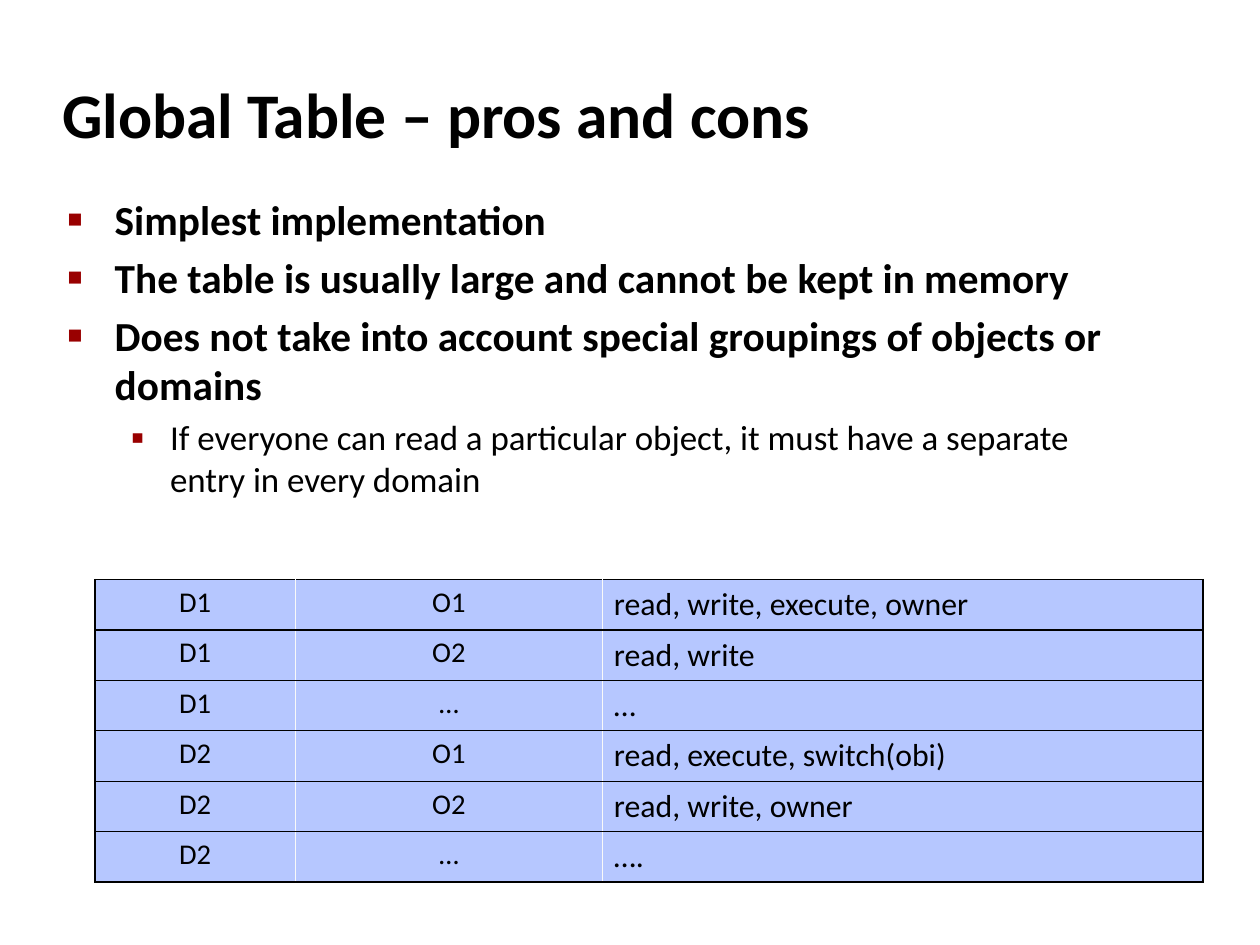
from lxml import etree
from pptx import Presentation
from pptx.dml.color import RGBColor
from pptx.enum import text
from pptx.oxml.ns import qn
from pptx.util import Cm, Pt

FONT = "Calibri"
COLORS = {"text": "000000", "bullet": "990000", "cell": "B6C7FF",
          "border": "000000", "divider": "F9F9F9"}

# (level, text)
POINTS = [
    (0, "Simplest implementation"),
    (0, "The table is usually large and cannot be kept in memory"),
    (0, "Does not take into account special groupings of objects or domains"),
    (1, "If everyone can read a particular object, it must have a separate "
        "entry in every domain"),
]
LEVELS = [
    {"size": 26, "bold": True, "left": 1.05, "hang": 1.05, "char": "■", "scale": 60},
    {"size": 22, "bold": False, "left": 2.28, "hang": 0.87, "char": "▪", "scale": 110},
]

RIGHTS = [
    ("D1", "O1", "read, write, execute, owner"),
    ("D1", "O2", "read, write"),
    ("D1", "…", "…"),
    ("D2", "O1", "read, execute, switch(obi)"),
    ("D2", "O2", "read, write, owner"),
    ("D2", "…", "…."),
]
COLUMN_WIDTHS = [4.45, 6.83, 13.34]
ROW_HEIGHT = 1.12


def write(p, words, size, bold=False, align=text.PP_ALIGN.LEFT):
    p.alignment = align
    r = p.add_run()
    r.text = words
    formats = {"name": FONT, "size": Pt(size), "bold": bold}
    for name, value in formats.items():
        setattr(r.font, name, value)
    r.font.color.rgb = RGBColor.from_string(COLORS["text"])


def place(sp, left, top, width, height, anchor):
    """Move a placeholder and give its text frame the common insets."""
    box = {"left": left, "top": top, "width": width, "height": height}
    for name, value in box.items():
        setattr(sp, name, Cm(value))
    tf = sp.text_frame
    formats = {"margin_left": Cm(0.28), "margin_right": Cm(0.28),
               "margin_top": Cm(0.15), "margin_bottom": Cm(0.15),
               "word_wrap": True, "auto_size": text.MSO_AUTO_SIZE.NONE,
               "vertical_anchor": anchor}
    for name, value in formats.items():
        setattr(tf, name, value)
    return tf


def add_bullet(p, style):
    pPr = p._p.get_or_add_pPr()
    pPr.set("marL", str(Cm(style["left"])))
    pPr.set("indent", str(-Cm(style["hang"])))
    color = etree.SubElement(pPr, qn("a:buClr"))
    etree.SubElement(color, qn("a:srgbClr"), val=COLORS["bullet"])
    etree.SubElement(pPr, qn("a:buSzPct"), val=str(style["scale"] * 1000))
    etree.SubElement(pPr, qn("a:buFont"), typeface="Arial")
    etree.SubElement(pPr, qn("a:buChar"), char=style["char"])


def fill_list(tf, points):
    for i, (level, words) in enumerate(points):
        p = tf.add_paragraph() if i else tf.paragraphs[0]
        style = LEVELS[level]
        p.level = level
        write(p, words, style["size"], style["bold"])
        add_bullet(p, style)


def add_border(cell, side, color, width):
    tcPr = cell._tc.get_or_add_tcPr()
    ln = etree.SubElement(tcPr, qn(f"a:ln{side}"), w=str(Pt(width)))
    fill = etree.SubElement(ln, qn("a:solidFill"))
    etree.SubElement(fill, qn("a:srgbClr"), val=COLORS[color])


def format_cell(cell, words, column):
    last = len(COLUMN_WIDTHS) - 1
    p = cell.text_frame.paragraphs[0]
    if column == last:
        write(p, words, 20)
    else:
        write(p, words, 18, align=text.PP_ALIGN.CENTER)
    outer = ("border", 1)
    inner = ("divider", 0.75)
    borders = {"L": inner if column else outer,
               "R": outer if column == last else inner,
               "T": outer, "B": outer}
    for side, (color, width) in borders.items():
        add_border(cell, side, color, width)
    cell.fill.solid()
    cell.fill.fore_color.rgb = RGBColor.from_string(COLORS["cell"])


def add_rights_table(s, left, top):
    frame = s.shapes.add_table(len(RIGHTS), len(COLUMN_WIDTHS), Cm(left), Cm(top),
                               Cm(sum(COLUMN_WIDTHS)), Cm(ROW_HEIGHT * len(RIGHTS)))
    table = frame.table
    table.first_row = table.horz_banding = False
    for column, width in zip(table.columns, COLUMN_WIDTHS):
        column.width = Cm(width)
    for i, row in enumerate(RIGHTS):
        table.rows[i].height = Cm(ROW_HEIGHT)
        for j, words in enumerate(row):
            format_cell(table.cell(i, j), words, j)


def main():
    prs = Presentation()
    prs.slide_width, prs.slide_height = Cm(28), Cm(21)
    s = prs.slides.add_slide(prs.slide_layouts[1])

    tf = place(s.shapes.title, 1.1, 1.35, 23.25, 2.33, text.MSO_ANCHOR.MIDDLE)
    write(tf.paragraphs[0], "Global Table – pros and cons", 40, bold=True)

    tf = place(s.placeholders[1], 1.22, 4.17, 24.18, 7.62, text.MSO_ANCHOR.TOP)
    fill_list(tf, POINTS)

    add_rights_table(s, 2.11, 12.88)
    prs.save("out.pptx")


if __name__ == "__main__":
    main()
